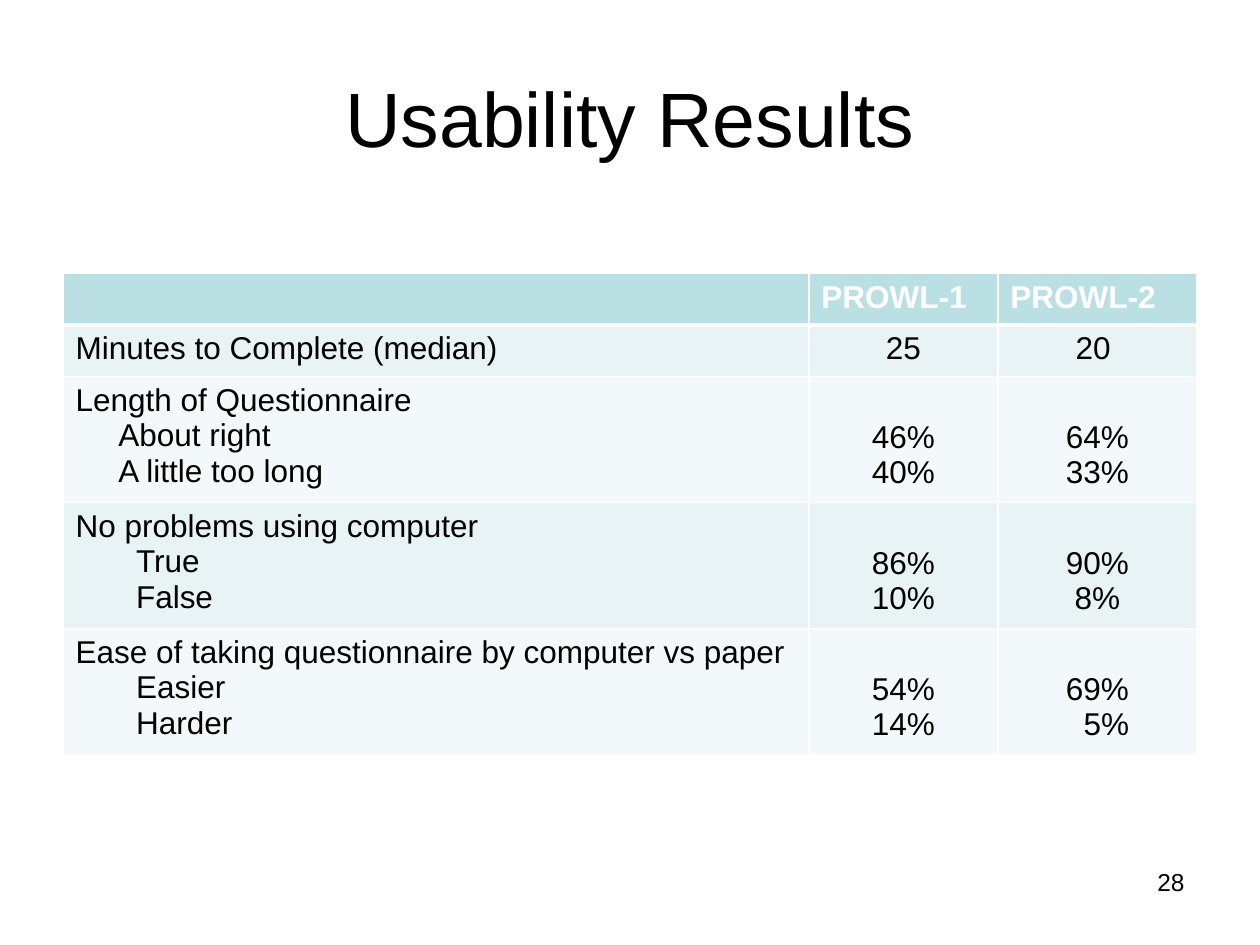
from lxml.etree import SubElement
from pptx import Presentation
from pptx.dml.color import RGBColor
from pptx.enum.text import MSO_ANCHOR, PP_ALIGN
from pptx.oxml.ns import qn
from pptx.util import Inches, Pt


def color(hex_value):
    return RGBColor.from_string(hex_value)


def format_text(paragraph, hex_value="000000", align=PP_ALIGN.LEFT, **font_values):
    paragraph.alignment = align
    values = {"name": "Arial", "size": Pt(18), "bold": False} | font_values
    for attribute, value in values.items():
        setattr(paragraph.font, attribute, value)
    paragraph.font.color.rgb = color(hex_value)


deck = Presentation()
deck.slide_width, deck.slide_height = Inches(10), Inches(7.5)
slide = deck.slides.add_slide(deck.slide_layouts[5])
margin = deck.slide_width * 0.05
content_width = deck.slide_width - 2 * margin

# Title
title = slide.shapes.title
title_place = {"left": int(margin), "top": Inches(0.3),
               "width": int(content_width), "height": Inches(1.25)}
for attribute, value in title_place.items():
    setattr(title, attribute, value)
title.text_frame.text = "Usability Results"
title.text_frame.vertical_anchor = MSO_ANCHOR.MIDDLE
format_text(title.text_frame.paragraphs[0], align=PP_ALIGN.CENTER, size=Pt(44))

# Results: question with its answers, PROWL-1, PROWL-2, indent of the answers
results = [
    ("", "PROWL-1", "PROWL-2", 0),
    ("Minutes to Complete (median)", "25", "20 ", 0),
    ("Length of Questionnaire\nAbout right\nA little too long",
     "46%\n40%", "64%\n33%", 0.34),
    ("No problems using computer\nTrue\nFalse", "86%\n10%", "90%\n8%", 0.48),
    ("Ease of taking questionnaire by computer vs paper\nEasier\nHarder",
     "54%\n14%", "69%\n5%", 0.48),
]
column_widths = [5.92, 1.5, 1.58]
row_heights = [0.41, 0.41, 1, 1, 1]
text_line = 0.29
digit_width = 0.14

table = slide.shapes.add_table(
    len(results), len(column_widths), int(margin), Inches(2.17),
    int(content_width), Inches(sum(row_heights))).table
for column, width in zip(table.columns, column_widths):
    column.width = Inches(width)
for row, height in zip(table.rows, row_heights):
    row.height = Inches(height)

for row_index, (*texts, answer_indent) in enumerate(results):
    header = row_index == 0
    band = "BBE0E3" if header else ("F3F9FA", "E7F3F4")[row_index % 2]
    for column_index, text in enumerate(texts):
        cell = table.cell(row_index, column_index)
        cell.text = text
        is_value = column_index > 0 and not header

        # Values start level with the first answer, below the question
        below_question = text_line if is_value and answer_indent else 0
        cell.margin_top = Inches(0.05 + below_question)

        for line_index, line in enumerate(cell.text_frame.paragraphs):
            format_text(line, "FFFFFF" if header else "000000",
                        PP_ALIGN.CENTER if is_value else PP_ALIGN.LEFT, bold=header)
            indent = 0
            if column_index == 0 and line_index > 0:
                indent = answer_indent
            elif line.text == "5%":
                indent = digit_width
            if indent:
                line._p.get_or_add_pPr().set("marL", str(Inches(indent)))

        # White cell borders, heavier around the line under the header
        borders = {"a:lnL": 1, "a:lnR": 1,
                   "a:lnT": 3 if row_index == 1 else 1, "a:lnB": 3 if header else 1}
        cell_properties = cell._tc.get_or_add_tcPr()
        for side, points in borders.items():
            border = SubElement(cell_properties, qn(side), w=str(Pt(points)))
            SubElement(SubElement(border, qn("a:solidFill")), qn("a:srgbClr"), val="FFFFFF")
        cell.fill.solid()
        cell.fill.fore_color.rgb = color(band)

# Page number
number_width = Inches(2.33)
page_number = slide.shapes.add_textbox(
    int(margin + content_width - number_width), Inches(6.83), number_width, Inches(0.52))
page_number.text_frame.word_wrap = True
page_number.text_frame.text = "28"
format_text(page_number.text_frame.paragraphs[0], align=PP_ALIGN.RIGHT, size=Pt(14))

deck.save("out.pptx")
